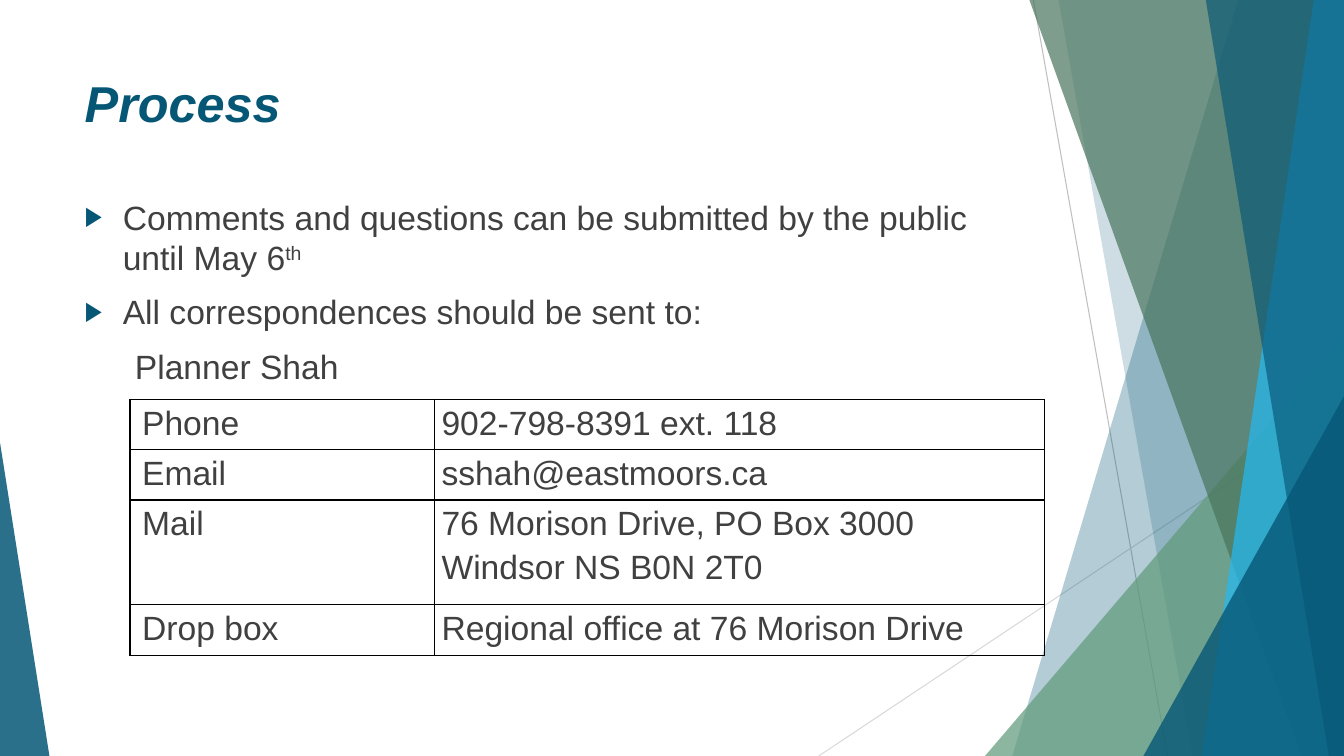
"""Build the Process slide with its contact table."""
from pptx import Presentation
from pptx.dml.color import RGBColor
from pptx.enum.shapes import MSO_CONNECTOR, MSO_SHAPE
from pptx.enum.text import MSO_ANCHOR
from pptx.oxml import parse_xml
from pptx.oxml.ns import nsdecls, qn
from pptx.util import Inches, Pt

STRAIGHT = MSO_CONNECTOR.STRAIGHT
TRIANGLE = MSO_SHAPE.ISOSCELES_TRIANGLE
TOP = MSO_ANCHOR.TOP

TEAL = RGBColor(0x06, 0x57, 0x76)
SAGE = RGBColor(0x60, 0x9B, 0x7A)
FOREST = RGBColor(0x48, 0x74, 0x5C)
SKY = RGBColor(0x23, 0xBA, 0xF4)
TEXT_GRAY = RGBColor(0x40, 0x40, 0x40)
LINE_GRAY = RGBColor(0xBF, 0xBF, 0xBF)
PALE_GRAY = RGBColor(0xD9, 0xD9, 0xD9)
BLACK = RGBColor(0, 0, 0)

FONT = "Arial"
WIDTH, HEIGHT = 13.33, 7.5

CONTACTS = [
    ("Phone", ["902-798-8391 ext. 118"], 0.5),
    ("Email", ["sshah@eastmoors.ca"], 0.5),
    ("Mail", ["76 Morison Drive, PO Box 3000", "Windsor NS B0N 2T0"], 1.04),
    ("Drop box", ["Regional office at 76 Morison Drive"], 0.5),
]


def add_line(page, start, end, color):
    line = page.shapes.add_connector(STRAIGHT, *map(Inches, start + end))
    line.line.color.rgb = color
    line.line.width = Pt(0.75)
    line._element.spPr.append(parse_xml(f"<a:effectLst {nsdecls('a')}/>"))


def paint(shape, color, opacity):
    shape.shadow.inherit = False
    shape.line.fill.background()
    shape.fill.solid()
    shape.fill.fore_color.rgb = color
    tint = shape._element.spPr.find(".//" + qn("a:srgbClr"))
    tint.append(parse_xml(f'<a:alpha {nsdecls("a")} val="{opacity * 1000}"/>'))


def add_panel(page, top_left, bottom_left, color, opacity):
    builder = page.shapes.build_freeform(Inches(top_left), 0)
    corners = [(WIDTH, 0), (WIDTH, HEIGHT), (bottom_left, HEIGHT)]
    builder.add_line_segments([(Inches(x), Inches(y)) for x, y in corners])
    paint(builder.convert_to_shape(), color, opacity)


def add_triangle(page, left, top, width, apex, color, opacity):
    shape = page.shapes.add_shape(
        TRIANGLE, Inches(left), Inches(top), Inches(width), Inches(HEIGHT - top))
    shape.adjustments[0] = apex
    paint(shape, color, opacity)


def add_decoration(page):
    add_line(page, (10.25, 0), (11.58, HEIGHT), LINE_GRAY)
    add_line(page, (WIDTH, 4.03), (8.12, HEIGHT), PALE_GRAY)
    add_panel(page, 12.28, 10.04, TEAL, 30)
    add_panel(page, 10.5, 11.83, TEAL, 20)
    add_triangle(page, 9.77, 3.33, 3.56, 1, SAGE, 72)
    add_panel(page, 10.21, 12.91, FOREST, 70)
    add_panel(page, 13.03, 11.92, SKY, 70)
    add_panel(page, 11.96, 13.18, TEAL, 65)
    add_triangle(page, 11.34, 3.93, 1.99, 1, TEAL, 80)
    add_triangle(page, 0, 4.39, 0.49, 0, TEAL, 85)


def add_span(para, text, size=24, color=TEXT_GRAY):
    span = para.add_run()
    span.text = text
    span.font.name = FONT
    span.font.size = Pt(size)
    span.font.color.rgb = color
    return span


def set_indent(para, left, first=0):
    properties = para._p.get_or_add_pPr()
    properties.set("marL", str(Inches(left)))
    properties.set("indent", str(Inches(first)))
    return properties


def add_bullet(para):
    properties = set_indent(para, 0.38, -0.38)
    for markup in (
        f'<a:buClr {nsdecls("a")}><a:srgbClr val="{TEAL}"/></a:buClr>',
        f'<a:buSzPct {nsdecls("a")} val="80000"/>',
        f'<a:buFont {nsdecls("a")} typeface="{FONT}"/>',
        f'<a:buChar {nsdecls("a")} char="▶"/>',
    ):
        properties.append(parse_xml(markup))


def set_title(page, text):
    title = page.shapes.title
    title.left, title.top = Inches(0.74), Inches(0.67)
    title.width, title.height = Inches(9.4), Inches(1.44)
    title.text_frame.vertical_anchor = TOP
    para = title.text_frame.paragraphs[0]
    set_indent(para, 0)
    para._p.get_or_add_pPr().set("algn", "l")
    span = add_span(para, text, 36, TEAL)
    span.font.bold = span.font.italic = True


def add_body(page):
    box = page.shapes.add_textbox(
        Inches(0.74), Inches(1.9), Inches(9.4), Inches(2.05))
    frame = box.text_frame
    frame.word_wrap = True
    deadline, address, planner = (
        frame.paragraphs[0], frame.add_paragraph(), frame.add_paragraph())
    for para in (deadline, address, planner):
        para.space_before = Pt(10)
    add_bullet(deadline)
    add_span(deadline, "Comments and questions can be submitted by the public until May 6")
    ordinal = add_span(deadline, "th")
    ordinal._r.get_or_add_rPr().set("baseline", "30000")
    add_bullet(address)
    add_span(address, "All correspondences should be sent to:")
    set_indent(planner, 0.5)
    add_span(planner, "Planner Shah")


def fill_cell(cell, lines, indent):
    cell.margin_left = cell.margin_right = Inches(0.07)
    cell.margin_top = cell.margin_bottom = 0
    cell.vertical_anchor = TOP
    cell.fill.background()
    properties = cell._tc.get_or_add_tcPr()
    for place, side in enumerate(("lnL", "lnR", "lnT", "lnB")):
        properties.insert(place, parse_xml(
            f'<a:{side} {nsdecls("a")} w="{Pt(1)}"><a:solidFill>'
            f'<a:srgbClr val="{BLACK}"/></a:solidFill></a:{side}>'))
    frame = cell.text_frame
    for number, text in enumerate(lines):
        para = frame.add_paragraph() if number else frame.paragraphs[0]
        para.line_spacing = 1.15
        set_indent(para, indent)
        add_span(para, text)


def add_contacts(page):
    table = page.shapes.add_table(
        len(CONTACTS), 2, Inches(1.29), Inches(3.96), Inches(9.07), Inches(2.54)).table
    table.first_row = table.horz_banding = False
    table.columns[0].width, table.columns[1].width = Inches(3.02), Inches(6.05)
    for row, (label, details, height) in zip(table.rows, CONTACTS):
        row.height = Inches(height)
        fill_cell(row.cells[0], [label], 0.05)
        fill_cell(row.cells[1], details, 0)


def main():
    deck = Presentation()
    deck.slide_width, deck.slide_height = Inches(WIDTH), Inches(HEIGHT)
    page = deck.slides.add_slide(deck.slide_layouts.get_by_name("Title Only"))
    add_decoration(page)
    set_title(page, "Process")
    add_body(page)
    add_contacts(page)
    deck.save("out.pptx")


if __name__ == "__main__":
    main()
